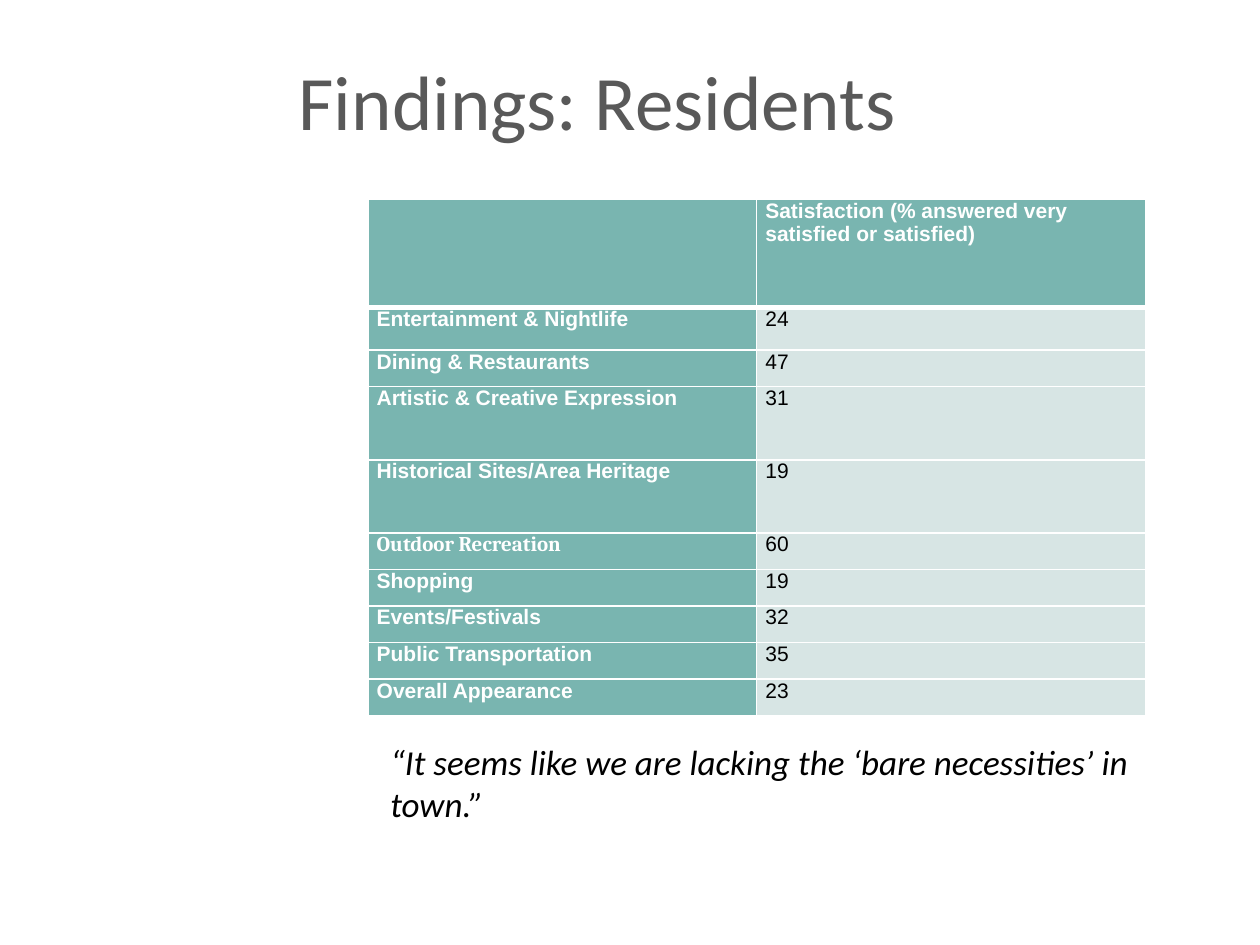
from dataclasses import dataclass

from lxml import etree
from pptx import Presentation
from pptx.dml.color import RGBColor
from pptx.enum import text as t
from pptx.oxml import ns
from pptx.util import Inches, Pt


@dataclass(frozen=True)
class Theme:
    """Colours, fonts and type sizes of the slide."""
    title: str = "595959"
    ink: str = "000000"
    white: str = "FFFFFF"
    teal: str = "79B5B0"
    pale: str = "D7E5E4"
    main_font: str = "Calibri"
    table_font: str = "Arial"
    serif_font: str = "Cambria"
    title_size: int = 44
    quote_size: int = 20
    table_size: int = 12


THEME = Theme()
HEADER = ("", "Satisfaction (% answered very satisfied or satisfied)")
SATISFACTION = [
    ("Entertainment & Nightlife", 24, 0.34),
    ("Dining & Restaurants", 47, 0.29),
    ("Artistic & Creative Expression", 31, 0.58),
    ("Historical Sites/Area Heritage", 19, 0.58),
    ("Outdoor Recreation", 60, 0.29),
    ("Shopping", 19, 0.29),
    ("Events/Festivals", 32, 0.29),
    ("Public Transportation", 35, 0.29),
    ("Overall Appearance", 23, 0.29),
]


def write(frame, wording, *, size, color, font=THEME.main_font, bold=False, italic=False):
    """Put formatted wording in the first paragraph of a frame and return it."""
    paragraph = frame.paragraphs[0]
    paragraph.alignment = t.PP_ALIGN.LEFT
    target = paragraph
    if wording:
        target = paragraph.add_run()
        target.text = wording
    target.font.size = Pt(size)
    target.font.name = font
    target.font.bold = bold
    target.font.italic = italic
    target.font.color.rgb = RGBColor.from_string(color)
    return paragraph


def add_borders(cell, top, bottom):
    """Draw white lines round a cell, with top and bottom widths in points."""
    properties = cell._tc.get_or_add_tcPr()
    for side, width in (("L", 1), ("R", 1), ("T", top), ("B", bottom)):
        line = etree.SubElement(properties, ns.qn(f"a:ln{side}"), w=str(Pt(width)))
        fill = etree.SubElement(line, ns.qn("a:solidFill"))
        etree.SubElement(fill, ns.qn("a:srgbClr"), val=THEME.white)


def fill_cell(cell, wording, fill, top=1, bottom=1, **style):
    """Format one table cell and write its wording."""
    cell.margin_left = cell.margin_right = Inches(0.07)
    cell.margin_top = cell.margin_bottom = 0
    add_borders(cell, top, bottom)
    cell.fill.solid()
    cell.fill.fore_color.rgb = RGBColor.from_string(fill)
    write(cell.text_frame, wording, size=THEME.table_size, **style)


def place_title(slide, left, top, width, height):
    """Place the slide title in its placeholder."""
    title = slide.shapes.title
    title.left, title.top, title.width, title.height = left, top, width, height
    frame = title.text_frame
    frame.vertical_anchor = t.MSO_ANCHOR.MIDDLE
    frame.auto_size = t.MSO_AUTO_SIZE.NONE
    paragraph = write(frame, "Findings: Residents", size=THEME.title_size, color=THEME.title)
    properties = paragraph._p.get_or_add_pPr()
    properties.set("marL", str(Inches(0.38)))
    properties.set("indent", str(-Inches(0.38)))


def place_satisfaction(slide, left, top, width, height):
    """Place the table of satisfaction by topic."""
    table = slide.shapes.add_table(len(SATISFACTION) + 1, 2, left, top, width, height).table
    for column in table.columns:
        column.width = width // 2
    heading = dict(color=THEME.white, bold=True)
    table.rows[0].height = Inches(0.86)
    for column, wording in enumerate(HEADER):
        fill_cell(table.cell(0, column), wording, THEME.teal, bottom=3,
                  font=THEME.table_font, **heading)
    for row, (topic, percent, row_height) in enumerate(SATISFACTION, 1):
        table.rows[row].height = Inches(row_height)
        line = 3 if row == 1 else 1
        topic_font = THEME.serif_font if topic == "Outdoor Recreation" else THEME.table_font
        fill_cell(table.cell(row, 0), topic, THEME.teal, top=line, font=topic_font, **heading)
        fill_cell(table.cell(row, 1), str(percent), THEME.pale, top=line,
                  font=THEME.table_font, color=THEME.ink)


def place_quote(slide, left, top, width, height):
    """Place the resident's quotation."""
    frame = slide.shapes.add_textbox(left, top, width, height).text_frame
    frame.word_wrap = True
    frame.auto_size = t.MSO_AUTO_SIZE.SHAPE_TO_FIT_TEXT
    write(frame, "“It seems like we are lacking the ‘bare necessities’ in town.”",
          size=THEME.quote_size, color=THEME.ink, italic=True)


def main():
    """Build and save the slide."""
    deck = Presentation()
    deck.slide_width, deck.slide_height = Inches(10), Inches(7.5)
    slide = deck.slides.add_slide(deck.slide_layouts.get_by_name("Title Only"))
    place_title(slide, Inches(2.27), Inches(0.25), Inches(7.32), Inches(1.08))
    place_satisfaction(slide, Inches(2.92), Inches(1.58), Inches(6.17), Inches(4.08))
    place_quote(slide, Inches(3), Inches(5.83), Inches(6.67), Inches(0.77))
    deck.save("out.pptx")


if __name__ == "__main__":
    main()
